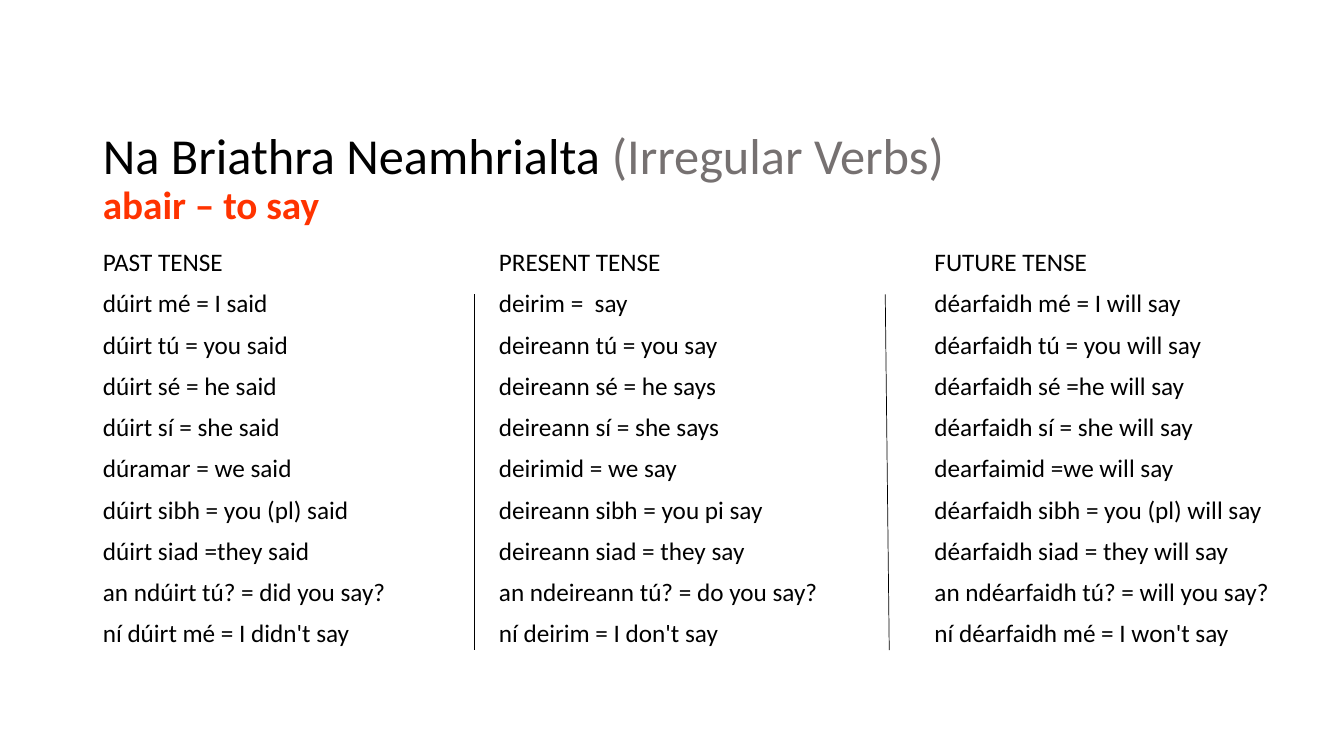
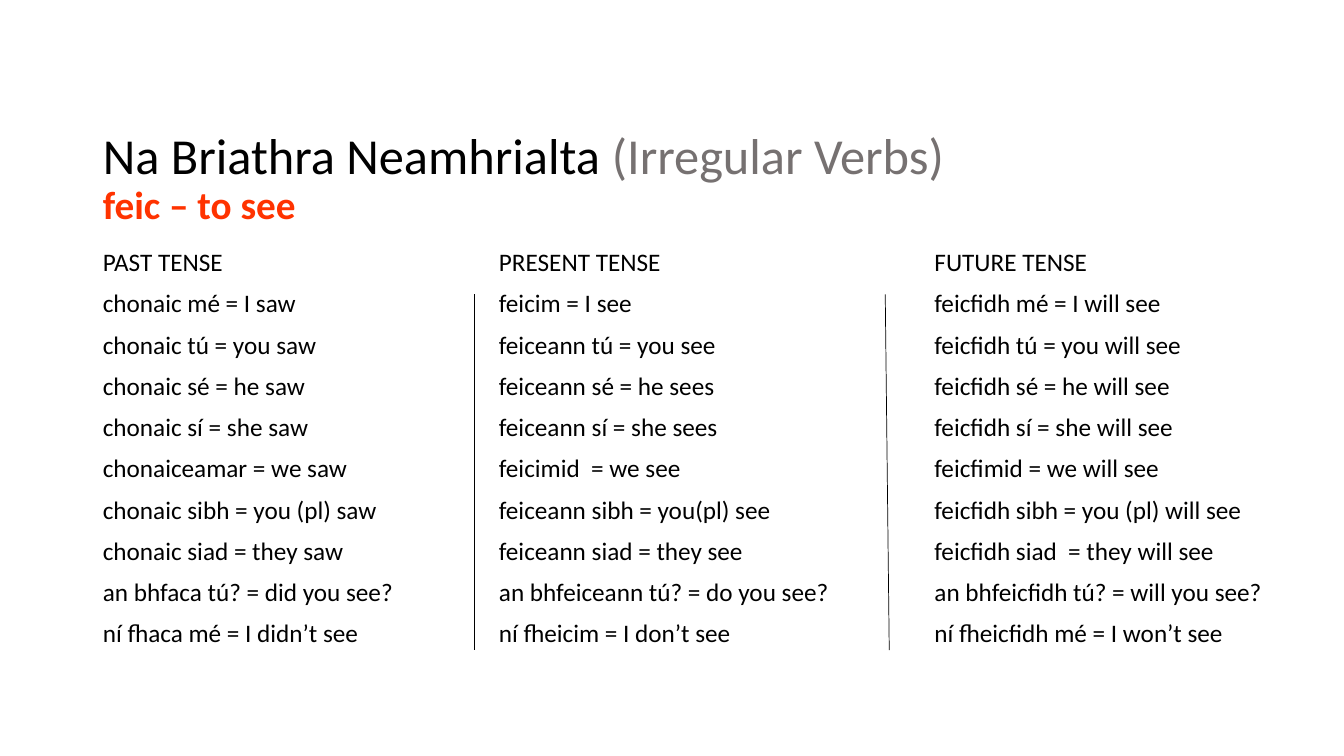
from dataclasses import dataclass

from lxml import etree
from pptx import Presentation
from pptx.dml.color import RGBColor
from pptx.enum import shapes, text
from pptx.oxml.ns import qn
from pptx.util import Inches, Pt


@dataclass(frozen=True)
class Theme:
    font: str = "Calibri"
    ink: RGBColor = RGBColor(0x00, 0x00, 0x00)
    muted: RGBColor = RGBColor(0x76, 0x71, 0x71)
    accent: RGBColor = RGBColor(0xFF, 0x33, 0x00)
    title_size: Pt = Pt(36)
    verb_size: Pt = Pt(28)
    body_size: Pt = Pt(18)
    line_spacing: float = 0.9
    row_gap: Pt = Pt(10)
    rule_width: Pt = Pt(0.5)


THEME = Theme()

TITLE, SUBTITLE = "Na Briathra Neamhrialta ", "(Irregular Verbs)"
TENSES = ("PAST TENSE", "PRESENT TENSE", "FUTURE TENSE")
VERBS = [
    ("abair – to say", (
        ("dúirt mé = I said", "dúirt tú = you said", "dúirt sé = he said",
         "dúirt sí = she said", "dúramar = we said",
         "dúirt sibh = you (pl) said", "dúirt siad =they said",
         "an ndúirt tú? = did you say?", "ní dúirt mé = I didn't say"),
        ("deirim =  say", "deireann tú = you say", "deireann sé = he says",
         "deireann sí = she says", "deirimid = we say",
         "deireann sibh = you pi say", "deireann siad = they say",
         "an ndeireann tú? = do you say?", "ní deirim = I don't say"),
        ("déarfaidh mé = I will say", "déarfaidh tú = you will say",
         "déarfaidh sé =he will say", "déarfaidh sí = she will say",
         "dearfaimid =we will say", "déarfaidh sibh = you (pl) will say",
         "déarfaidh siad = they will say",
         "an ndéarfaidh tú? = will you say?", "ní déarfaidh mé = I won't say"),
    )),
    ("feic – to see", (
        ("chonaic mé = I saw", "chonaic tú = you saw", "chonaic sé = he saw",
         "chonaic sí = she saw", "chonaiceamar = we saw",
         "chonaic sibh = you (pl) saw", "chonaic siad = they saw",
         "an bhfaca tú? = did you see?", "ní fhaca mé = I didn’t see"),
        ("feicim = I see", "feiceann tú = you see", "feiceann sé = he sees",
         "feiceann sí = she sees", "feicimid  = we see",
         "feiceann sibh = you(pl) see", "feiceann siad = they see",
         "an bhfeiceann tú? = do you see?", "ní fheicim = I don’t see"),
        ("feicfidh mé = I will see", "feicfidh tú = you will see",
         "feicfidh sé = he will see", "feicfidh sí = she will see",
         "feicfimid = we will see", "feicfidh sibh = you (pl) will see",
         "feicfidh siad  = they will see",
         "an bhfeicfidh tú? = will you see?", "ní fheicfidh mé = I won’t see"),
    )),
]

TITLE_BOX = (0.92, 1.25, 12.19, 1.15)
COLUMN_TOP, COLUMN_HEIGHT = 2.43, 4.2
COLUMNS = ((0.92, 3.57), (4.85, 4.11), (9.17, 3.57))
RULE_TOP, RULE_BOTTOM = 2.92, 6.45
RULES = ((4.7, 4.7), (8.78, 8.82))


def apply(target, **values):
    for name, value in values.items():
        setattr(target, name, value)


def place(shape, box):
    left, top, width, height = map(Inches, box)
    apply(shape, left=left, top=top, width=width, height=height)
    apply(shape.text_frame, word_wrap=True, auto_size=text.MSO_AUTO_SIZE.NONE,
          vertical_anchor=text.MSO_ANCHOR.TOP)


def style_font(font, size, color, bold=False):
    apply(font, name=THEME.font, size=size, bold=bold)
    font.color.rgb = color


def fill_title(title, verb):
    place(title, TITLE_BOX)
    paragraph = title.text_frame.paragraphs[0]
    apply(paragraph, alignment=text.PP_ALIGN.LEFT,
          line_spacing=THEME.line_spacing, space_before=Pt(0))
    for words, size, color, bold in (
            (TITLE, THEME.title_size, THEME.ink, False),
            (SUBTITLE, THEME.title_size, THEME.muted, False),
            (verb, THEME.verb_size, THEME.accent, True)):
        if words == verb:
            paragraph.add_line_break()
        run = paragraph.add_run()
        run.text = words
        style_font(run.font, size, color, bold)


def fill_column(shape, box, lines):
    place(shape, box)
    frame = shape.text_frame
    for index, line in enumerate(lines):
        paragraph = frame.add_paragraph() if index else frame.paragraphs[0]
        apply(paragraph, alignment=text.PP_ALIGN.LEFT,
              line_spacing=THEME.line_spacing,
              space_before=THEME.row_gap if index else Pt(0))
        properties = paragraph._p.get_or_add_pPr()
        properties.set("marL", "0")
        properties.set("indent", "0")
        etree.SubElement(properties, qn("a:buNone"))
        run = paragraph.add_run()
        run.text = line
        style_font(run.font, THEME.body_size, THEME.ink)


def add_rule(slide, top_x, bottom_x):
    rule = slide.shapes.add_connector(
        shapes.MSO_CONNECTOR.STRAIGHT, Inches(top_x), Inches(RULE_TOP),
        Inches(bottom_x), Inches(RULE_BOTTOM))
    rule.line.color.rgb = THEME.ink
    rule.line.width = THEME.rule_width
    etree.SubElement(rule._element.spPr, qn("a:effectLst"))


def add_verb_slide(presentation, verb, conjugations):
    slide = presentation.slides.add_slide(presentation.slide_layouts[1])
    fill_title(slide.shapes.title, verb)
    for rule in RULES:
        add_rule(slide, *rule)
    for index, (tense, forms) in enumerate(zip(TENSES, conjugations)):
        left, width = COLUMNS[index]
        column = (slide.shapes.add_textbox(0, 0, 0, 0) if index
                  else slide.placeholders[1])
        fill_column(column, (left, COLUMN_TOP, width, COLUMN_HEIGHT),
                    (tense, *forms))


def main():
    presentation = Presentation()
    apply(presentation, slide_width=Inches(13.33), slide_height=Inches(7.5))
    for verb, conjugations in VERBS:
        add_verb_slide(presentation, verb, conjugations)
    presentation.save("out.pptx")


if __name__ == "__main__":
    main()
